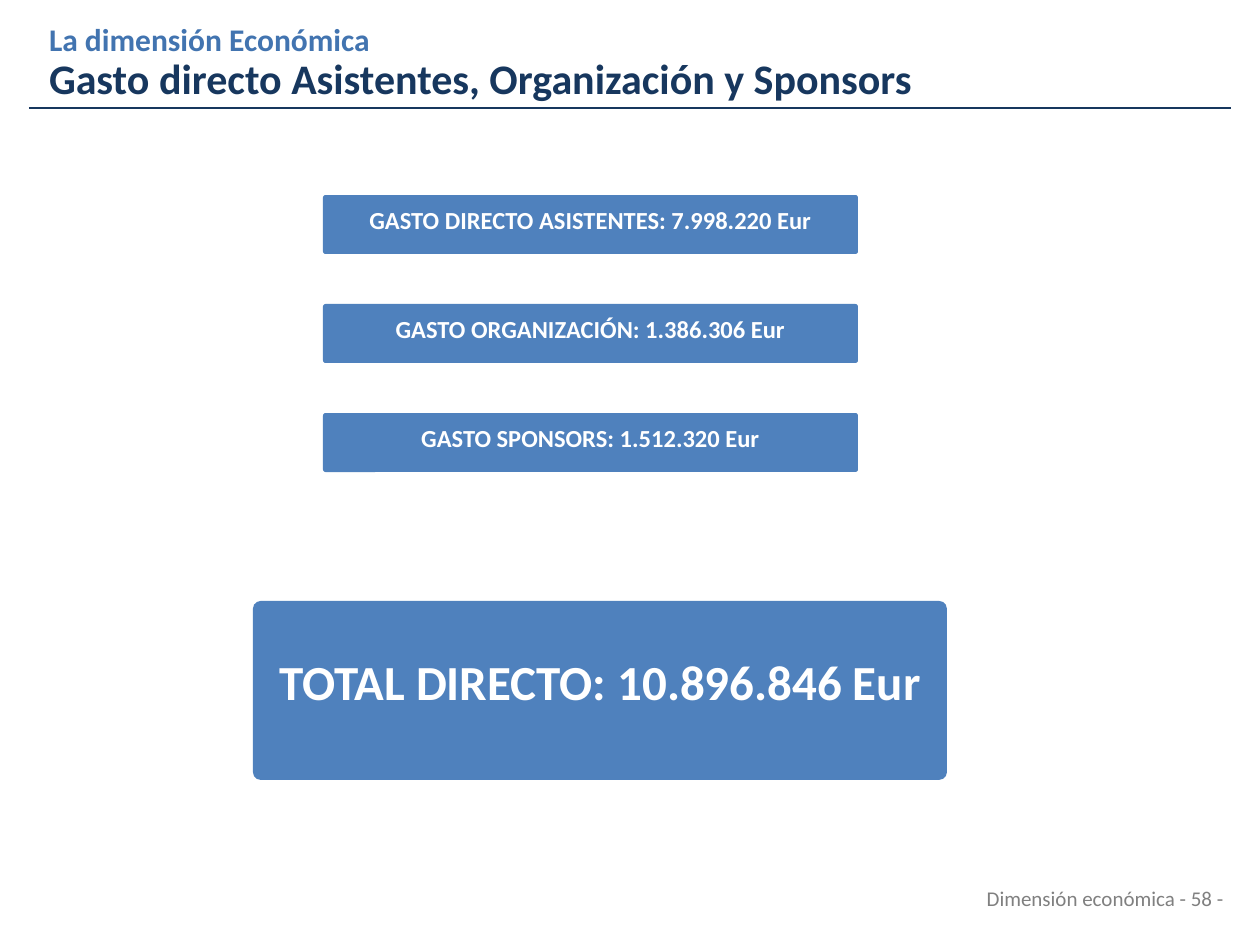
from dataclasses import dataclass

from lxml.etree import SubElement
from pptx import Presentation
from pptx.dml.color import RGBColor
from pptx.enum.shapes import MSO_CONNECTOR, MSO_SHAPE
from pptx.enum.text import MSO_ANCHOR as Anchor, MSO_AUTO_SIZE as AutoSize, PP_ALIGN as Align
from pptx.oxml.ns import qn
from pptx.util import Pt

EMU_PER_PX = 914400 / 126


def px(length):
    return round(length * EMU_PER_PX)


@dataclass(frozen=True)
class Theme:
    font: str = "Calibri"
    navy: str = "17375E"
    blue: str = "4274B0"
    box: str = "4F81BD"
    white: str = "FFFFFF"
    gray: str = "808080"
    section_size: int = 18
    title_size: int = 24
    expense_size: int = 14
    total_size: int = 28
    footer_size: int = 12


class SlideBuilder:
    """Draws themed elements on one slide, with lengths in px."""

    def __init__(self, slide, theme):
        self.slide = slide
        self.theme = theme

    def style(self, run, size, color, bold=True):
        run.font.name = self.theme.font
        run.font.size = Pt(size)
        run.font.bold = bold
        run.font.color.rgb = RGBColor.from_string(color)

    def title(self, section, heading, left, top, width, height):
        shape = self.slide.shapes.title
        shape.left, shape.top, shape.width, shape.height = map(px, (left, top, width, height))
        frame = shape.text_frame
        frame.margin_left = frame.margin_right = frame.margin_top = frame.margin_bottom = 0
        frame.vertical_anchor = Anchor.MIDDLE
        frame.auto_size = AutoSize.NONE
        frame.word_wrap = True
        paragraph = frame.paragraphs[0]
        paragraph.text = f"{section}\v{heading}"
        paragraph.alignment = Align.LEFT
        paragraph.line_spacing = 0.9
        section_run, heading_run = paragraph.runs
        self.style(section_run, self.theme.section_size, self.theme.blue)
        self.style(heading_run, self.theme.title_size, self.theme.navy)

    def rule(self, left, right, y):
        line = self.slide.shapes.add_connector(
            MSO_CONNECTOR.STRAIGHT, px(left), px(y), px(right), px(y))
        line.line.color.rgb = RGBColor.from_string(self.theme.navy)
        line.line.width = Pt(0.75)
        SubElement(line._element.spPr, qn("a:effectLst"))

    def box(self, text, size, left, top, width, height):
        shape = self.slide.shapes.add_shape(
            MSO_SHAPE.ROUNDED_RECTANGLE, *map(px, (left, top, width, height)))
        shape.adjustments[0] = 0.043
        shape.shadow.inherit = False
        shape.fill.solid()
        shape.fill.fore_color.rgb = RGBColor.from_string(self.theme.box)
        shape.line.fill.background()
        frame = shape.text_frame
        frame.vertical_anchor = Anchor.MIDDLE
        frame.word_wrap = True
        paragraph = frame.paragraphs[0]
        paragraph.text = text
        paragraph.alignment = Align.CENTER
        paragraph.line_spacing = 0.6
        self.style(paragraph.runs[0], size, self.theme.white)

    def footer(self, text, left, top, width, height):
        shape = self.slide.shapes.add_textbox(*map(px, (left, top, width, height)))
        frame = shape.text_frame
        frame.word_wrap = True
        paragraph = frame.paragraphs[0]
        paragraph.text = text
        paragraph.alignment = Align.RIGHT
        self.style(paragraph.runs[0], self.theme.footer_size, self.theme.gray, bold=False)


def main():
    presentation = Presentation()
    presentation.slide_width, presentation.slide_height = px(1260), px(945)
    theme = Theme()
    title_only = presentation.slide_layouts[5]
    builder = SlideBuilder(presentation.slides.add_slide(title_only), theme)

    builder.title("La dimensión Económica",
                  "Gasto directo Asistentes, Organización y Sponsors", 49, 23, 1142, 81)
    builder.rule(29, 1231, 108)

    expenses = (
        "GASTO DIRECTO ASISTENTES: 7.998.220 Eur",
        "GASTO ORGANIZACIÓN: 1.386.306 Eur",
        "GASTO SPONSORS: 1.512.320 Eur",
    )
    first_top, pitch = 195, 109
    for index, expense in enumerate(expenses):
        builder.box(expense, theme.expense_size, 323, first_top + index * pitch, 535, 59)
    builder.box("TOTAL DIRECTO: 10.896.846 Eur", theme.total_size, 253, 601, 694, 179)

    builder.footer("Dimensión económica - 58 -", 819, 879, 417, 38)
    presentation.save("out.pptx")


if __name__ == "__main__":
    main()
